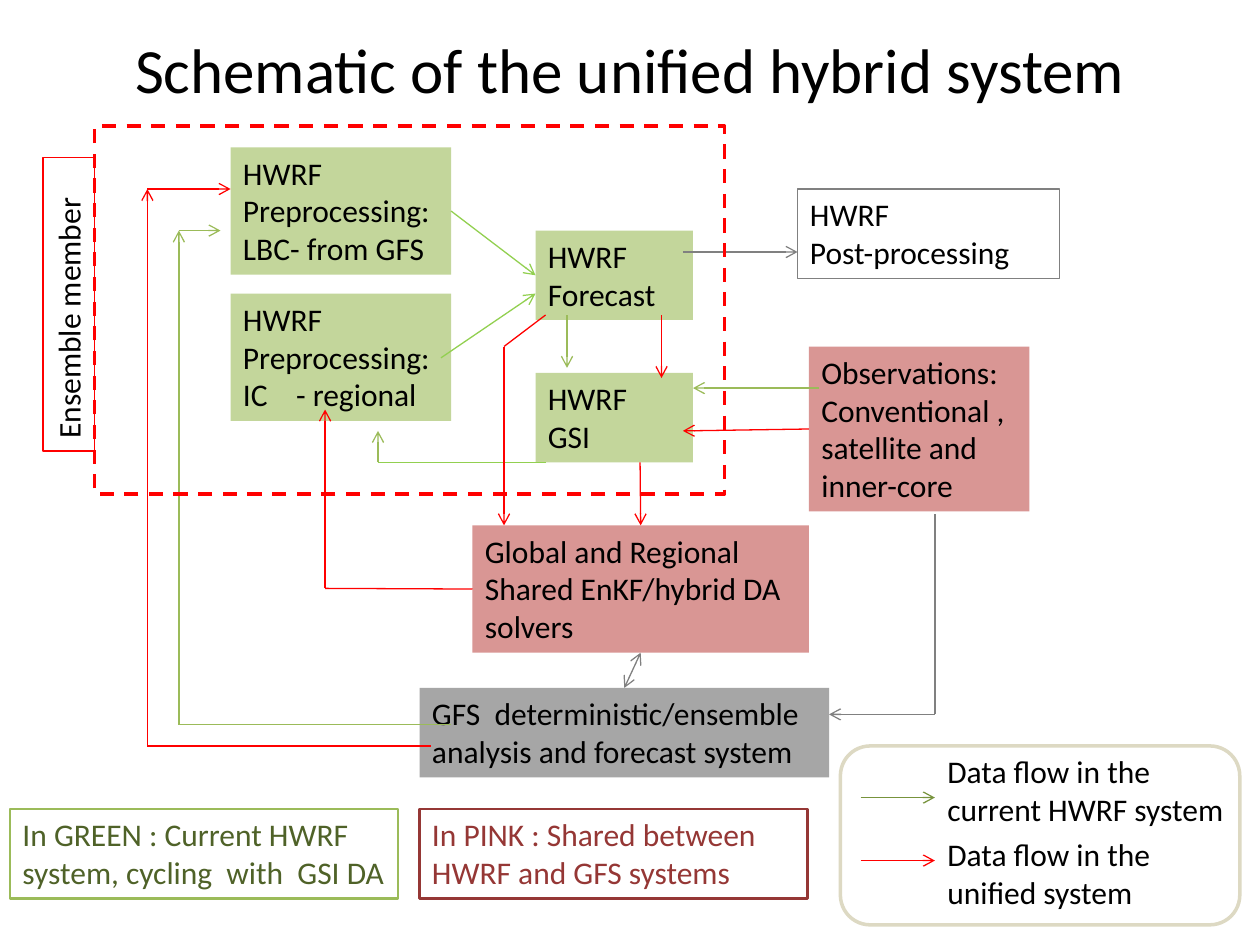
from lxml import etree
from pptx import Presentation
from pptx.dml.color import RGBColor
from pptx.enum.dml import MSO_LINE
from pptx.enum.shapes import MSO_CONNECTOR, MSO_SHAPE
from pptx.enum.text import MSO_ANCHOR, PP_ALIGN
from pptx.oxml.ns import qn
from pptx.util import Inches, Pt

RECT, ROUND = MSO_SHAPE.RECTANGLE, MSO_SHAPE.ROUNDED_RECTANGLE
STRAIGHT = MSO_CONNECTOR.STRAIGHT
DASH = MSO_LINE.DASH
MIDDLE, TOP_EDGE = MSO_ANCHOR.MIDDLE, MSO_ANCHOR.TOP
LEFT_AL, CENTER = PP_ALIGN.LEFT, PP_ALIGN.CENTER
TOP, LEFT, BOTTOM, RIGHT = range(4)

COLORS = {
    "black": "000000", "white": "FFFFFF", "red": "FF0000",
    "gray": "808080", "silver": "A6A6A6", "sand": "DDD9C3",
    "pale": "C3D69B", "lime": "92D050", "green": "9BBB59",
    "olive": "77933C", "forest": "4F6228",
    "pink": "D99694", "maroon": "953735",
}


def rgb(name):
    return RGBColor.from_string(COLORS[name])


def write(frame, text, size=18, color="black", align=LEFT_AL, anchor=TOP_EDGE):
    """Fill a text frame, one paragraph for each line of text."""
    frame.word_wrap = True
    frame.vertical_anchor = anchor
    frame.text = text
    for para in frame.paragraphs:
        para.alignment = align
        for run in para.runs:
            run.font.name = "Calibri"
            run.font.size = Pt(size)
            run.font.color.rgb = rgb(color)


class Board:
    def __init__(self, deck):
        self.slide = deck.slides.add_slide(deck.slide_layouts[5])
        self.shapes = self.slide.shapes

    def title(self, text, *area):
        head = self.shapes.title
        head.left, head.top, head.width, head.height = map(Inches, area)
        write(head.text_frame, text, size=36, align=CENTER, anchor=MIDDLE)

    def box(self, area, text="", fill=None, line=None, width=0.75,
            dash=None, kind=RECT, turn=0, color="black"):
        shape = self.shapes.add_shape(kind, *map(Inches, area))
        shape.shadow.inherit = False
        shape.rotation = turn
        if fill:
            shape.fill.solid()
            shape.fill.fore_color.rgb = rgb(fill)
        else:
            shape.fill.background()
        if line:
            shape.line.color.rgb = rgb(line)
            shape.line.width = Pt(width)
            shape.line.dash_style = dash
        else:
            shape.line.fill.background()
        if text:
            write(shape.text_frame, text, color=color)
        return shape

    def label(self, area, text):
        frame = self.shapes.add_textbox(*map(Inches, area)).text_frame
        write(frame, text)

    def line(self, start, end, color, ends=()):
        link = self.shapes.add_connector(
            STRAIGHT, *map(Inches, (*start, *end)))
        link.line.color.rgb = rgb(color)
        link.line.width = Pt(0.75)
        props = link._element.spPr
        for tag in ends:
            etree.SubElement(props.find(qn("a:ln")), qn(tag), type="arrow")
        etree.SubElement(props, qn("a:effectLst"))
        return link

    def flow(self, color, *points, begin=None, end=None, arrow=True,
             both=False):
        """Draw a chain of lines; begin and end are (box, side) joints."""
        links = []
        last = len(points) - 2
        for i, pair in enumerate(zip(points, points[1:])):
            ends = ["a:headEnd"] if both and i == 0 else []
            if arrow and i == last:
                ends.append("a:tailEnd")
            links.append(self.line(*pair, color, ends))
        if begin:
            links[0].begin_connect(*begin)
        if end:
            links[-1].end_connect(*end)


def main():
    deck = Presentation()
    deck.slide_width, deck.slide_height = Inches(10), Inches(7.5)
    board = Board(deck)
    box, flow = board.box, board.flow

    board.title("Schematic of the unified hybrid system", 0.5, -0.08, 9, 1.25)

    # System parts
    bounds = box((1.83, 1.17, 1.75, 1.01),
                 "HWRF\nPreprocessing:\nLBC- from GFS", "pale")
    model = box((4.25, 1.83, 1.25, 0.71), "HWRF\nForecast", "pale")
    box((4.25, 2.96, 1.25, 0.71), "HWRF\nGSI", "pale")
    box((6.33, 1.5, 2.08, 0.71), "HWRF\nPost-processing", line="gray")
    box((1.83, 2.33, 1.75, 1.01),
        "HWRF\nPreprocessing:\nIC    - regional", "pale")
    solver = box((3.75, 4.17, 2.67, 1.01),
                 "Global and Regional Shared EnKF/hybrid DA solvers", "pink")
    globe = box((3.33, 5.46, 3.25, 0.71),
                "GFS  deterministic/ensemble analysis and forecast system",
                "silver")
    data = box((6.42, 2.75, 1.75, 1.31),
               "Observations:\nConventional ,  satellite and inner-core",
               "pink")

    # Data flow in the current system
    flow("lime", (3.58, 1.67), (4.25, 2.19),
         begin=(bounds, RIGHT), end=(model, LEFT))
    flow("lime", (3.5, 2.84), (4.25, 2.33))
    flow("lime", (4.33, 3.67), (3, 3.67), arrow=False)
    flow("green", (3, 3.67), (3, 3.42))
    flow("green", (4.5, 2.5), (4.5, 2.92))
    flow("green", (6.5, 3.08), (5.5, 3.08))
    flow("green", (3.58, 5.75), (1.42, 5.75), arrow=False)
    flow("green", (1.42, 5.75), (1.42, 1.83))
    flow("green", (1.42, 1.83), (1.75, 1.83))

    # Data flow in the unified system
    flow("red", (3.42, 5.92), (1.17, 5.92), arrow=False)
    flow("red", (1.17, 5.92), (1.17, 1.5))
    flow("red", (1.17, 1.5), (1.83, 1.5))
    flow("red", (5.08, 3.67), (5.08, 4.17), end=(solver, TOP))
    flow("red", (5.25, 2.5), (5.25, 3))
    flow("red", (3.75, 4.67), (2.58, 4.67), (2.58, 3.25),
         begin=(solver, LEFT))
    flow("red", (6.42, 3.42), (5.42, 3.42), begin=(data, LEFT))
    flow("red", (4.33, 2.5), (4, 2.75), (4, 4.17))

    # Links to the global system and to post-processing
    flow("gray", (5.08, 5.18), (4.96, 5.46), both=True,
         begin=(solver, BOTTOM), end=(globe, TOP))
    flow("gray", (7.42, 4.08), (7.42, 5.67), (6.58, 5.67))
    flow("gray", (5.42, 2), (6.33, 2))

    # Ensemble frame
    box((0.75, 1, 5, 2.92), line="red", width=2, dash=DASH)
    box((-0.62, 2.21, 2.33, 0.41), "Ensemble member", line="red", turn=270)

    # Legend
    keys = (
        (0.08, "In GREEN : Current HWRF system, cycling  with  GSI DA",
         "green", "forest"),
        (3.33, "In PINK : Shared between  HWRF and GFS systems",
         "maroon", "maroon"),
    )
    for left, text, edge, ink in keys:
        box((left, 6.42, 3.08, 0.71), text, "white", edge, 1.5, color=ink)
    box((6.67, 5.92, 3.17, 1.42), line="sand", width=2, kind=ROUND)
    notes = (
        (5.92, 6.33, "olive", "Data flow in the current HWRF system"),
        (6.58, 6.83, "red", "Data flow in the unified system"),
    )
    for top, level, color, text in notes:
        board.label((7.42, top, 2.5, 0.71), text)
        flow(color, (6.83, level), (7.42, level))

    deck.save("out.pptx")


if __name__ == "__main__":
    main()
